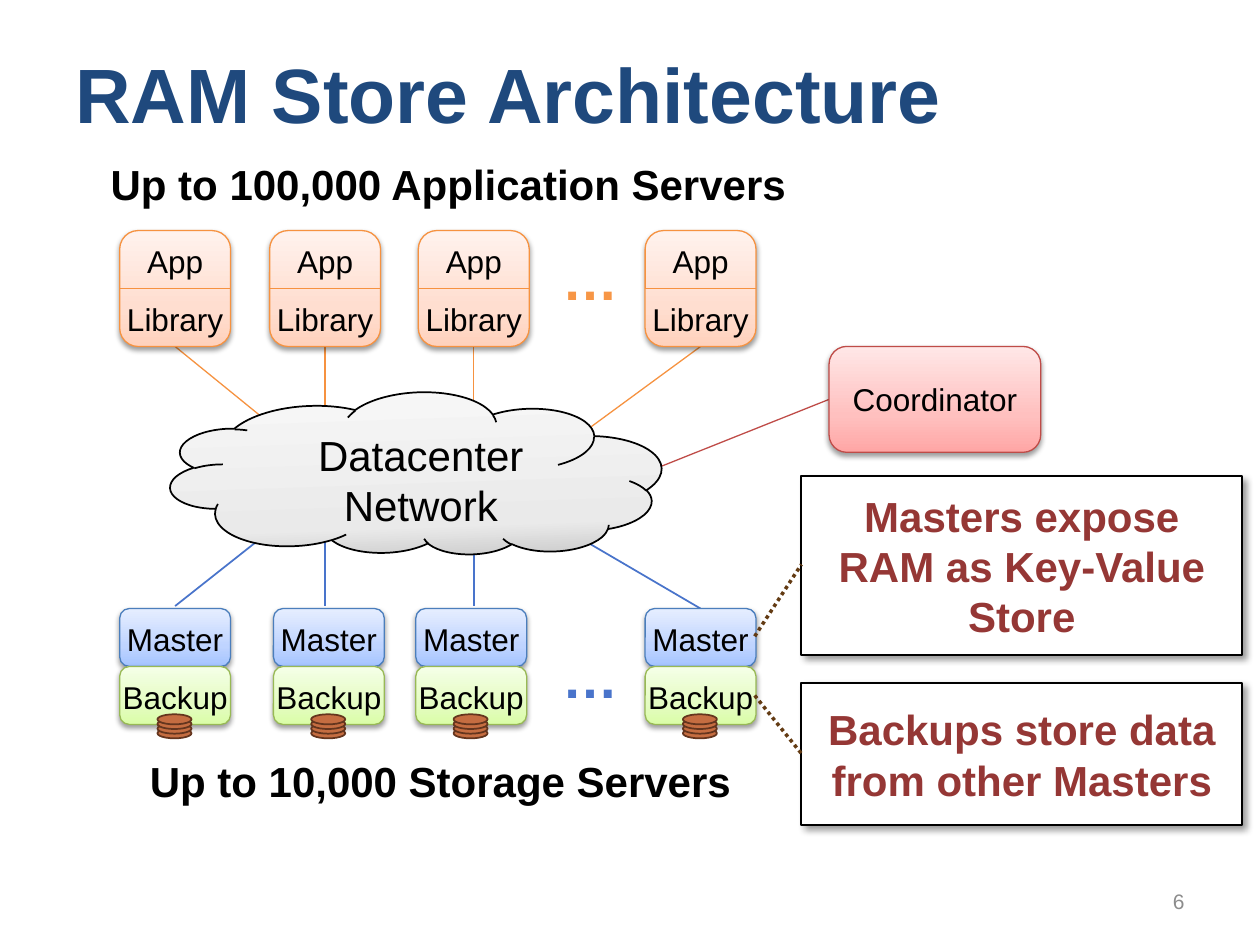
from copy import deepcopy

from pptx import Presentation
from pptx.dml.color import RGBColor
from pptx.enum.dml import MSO_LINE
from pptx.enum.shapes import MSO_CONNECTOR, MSO_SHAPE
from pptx.enum.text import MSO_ANCHOR, PP_ALIGN
from pptx.oxml import parse_xml
from pptx.oxml.ns import nsdecls, qn
from pptx.util import Inches, Pt

ROUNDED, RECTANGLE = MSO_SHAPE.ROUNDED_RECTANGLE, MSO_SHAPE.RECTANGLE
OVAL, CLOUD = MSO_SHAPE.OVAL, MSO_SHAPE.CLOUD
STRAIGHT, DOTTED = MSO_CONNECTOR.STRAIGHT, MSO_LINE.ROUND_DOT
LEFT, CENTER, RIGHT = PP_ALIGN.LEFT, PP_ALIGN.CENTER, PP_ALIGN.RIGHT
TOP, MIDDLE = MSO_ANCHOR.TOP, MSO_ANCHOR.MIDDLE

BLACK, WHITE = RGBColor(0, 0, 0), RGBColor(255, 255, 255)
NAVY = RGBColor(0x1F, 0x49, 0x7D)
GRAY = RGBColor(0x8C, 0x8C, 0x8C)
MAROON = RGBColor(0x95, 0x37, 0x35)
BROWN = RGBColor(0x63, 0x3B, 0x13)
DISK, DISK_EDGE = RGBColor(0xC5, 0x6D, 0x41), RGBColor(0x64, 0x35, 0x1E)
ORANGE, ORANGE_DOTS = RGBColor(0xF6, 0x92, 0x40), RGBColor(0xF7, 0x96, 0x46)
BLUE, BLUE_EDGE = RGBColor(0x49, 0x74, 0xCB), RGBColor(0x4B, 0x7E, 0xBC)
GREEN_EDGE = RGBColor(0x98, 0xB9, 0x55)
RED = RGBColor(0xBF, 0x4C, 0x48)

# Gradients as (position, colour), running upwards from the bottom edge
ORANGE_FADE = [(0, RGBColor(0xFF, 0xD2, 0xBD)), (0.35, RGBColor(0xFF, 0xDE, 0xD0)),
               (1, RGBColor(0xFF, 0xF2, 0xED))]
BLUE_FADE = [(0, RGBColor(0xA4, 0xC4, 0xFF)), (0.35, RGBColor(0xBF, 0xD4, 0xFF)),
             (1, RGBColor(0xE6, 0xEE, 0xFF))]
GREEN_FADE = [(0, RGBColor(0xDA, 0xFD, 0xA7)), (0.35, RGBColor(0xE4, 0xFC, 0xC2)),
              (1, RGBColor(0xF5, 0xFF, 0xE7))]
RED_FADE = [(0, RGBColor(0xFF, 0xA6, 0xA5)), (0.35, RGBColor(0xFF, 0xC0, 0xBF)),
            (1, RGBColor(0xFF, 0xE7, 0xE7))]
GRAY_FADE = [(0, RGBColor(0xF8, 0xF8, 0xF8)), (0.76, RGBColor(0xEA, 0xEA, 0xEA)),
             (1, RGBColor(0xC0, 0xC0, 0xC0))]

# Shadows as opacity %, blur pt, distance pt, angle
SOFT, DEEP = (38, 3.1, 1.6, 90), (40, 4, 3, 45)

deck = Presentation()
deck.slide_width, deck.slide_height = Inches(10), Inches(7.5)
page = deck.slides.add_slide(deck.slide_layouts[6])
COLUMN, ROW = deck.slide_width / 100, deck.slide_height / 75


def add_box(parent, kind, x, y, width, height, text="", fill=None, edge=None,
            weight=0.75, shadow=None, size=18, color=BLACK, bold=False,
            align=CENTER, anchor=TOP, margin=None, wrap=True):
    """Add a preset shape, or a text box if kind is None; lengths in grid cells."""
    area = (round(x * COLUMN), round(y * ROW), round(width * COLUMN), round(height * ROW))
    if kind is None:
        box = parent.add_textbox(*area)
    else:
        box = parent.add_shape(kind, *area)
        box.shadow.inherit = False
        box.line.color.rgb, box.line.width = edge, Pt(weight)
        if isinstance(fill, list):
            box.fill.gradient()
            box.fill.gradient_angle = 90
            stops = box._element.spPr.find(qn("a:gradFill")).find(qn("a:gsLst"))
            stops.append(deepcopy(stops[0]))
            for stop, (position, tint) in zip(box.fill.gradient_stops, fill):
                stop.position, stop.color.rgb = position, tint
        else:
            box.fill.solid()
            box.fill.fore_color.rgb = fill
    if shadow:
        add_shadow_to = box._element.spPr.find(qn("a:effectLst"))
        opacity, blur, distance, angle = shadow
        add_shadow_to.append(parse_xml(
            f'<a:outerShdw {nsdecls("a")} blurRad="{Pt(blur)}" dist="{Pt(distance)}" '
            f'dir="{angle * 60000}" rotWithShape="0"><a:srgbClr val="000000">'
            f'<a:alpha val="{opacity * 1000}"/></a:srgbClr></a:outerShdw>'))
    if text:
        frame = box.text_frame
        frame.word_wrap, frame.vertical_anchor = wrap, anchor
        if margin is not None:
            for side in ("left", "top", "right", "bottom"):
                setattr(frame, f"margin_{side}", margin)
        para = frame.paragraphs[0]
        para.text, para.alignment = text, align
        for span in para.runs:
            for name, value in {"name": "Arial", "size": Pt(size), "bold": bold}.items():
                setattr(span.font, name, value)
            span.font.color.rgb = color
    return box


def add_line(parent, x1, y1, x2, y2, color, weight=0.75, dash=None):
    """Add a straight line without a shadow; lengths in grid cells."""
    line = parent.add_connector(STRAIGHT, round(x1 * COLUMN), round(y1 * ROW),
                                round(x2 * COLUMN), round(y2 * ROW))
    line.line.color.rgb, line.line.width = color, Pt(weight)
    if dash:
        line.line.dash_style = dash
    line._element.spPr.append(parse_xml(f'<a:effectLst {nsdecls("a")}/>'))


shapes = page.shapes
SERVER_WIDTH, TIER = 8.8, 4.6
APP_TOP, STORAGE_TOP = 18.3, 48.3
APP_COLUMNS = [9.5, 21.4, 33.2, 51.2]
STORAGE_COLUMNS = [9.5, 21.7, 33, 51.2]

# Network links
add_line(shapes, 65.8, 31.7, 52.5, 37, RED)
for x1, y1, x2, y2 in [(25.8, 42.8, 25.8, 48.1), (37.6, 43.5, 37.6, 48.1),
                       (46.2, 42.8, 55.6, 48.3), (20.6, 42.8, 13.9, 48.1)]:
    add_line(shapes, x1, y1, x2, y2, BLUE, 1)
for x1, x2, y2 in [(13.9, 21.4, 33.6), (25.8, 25.8, 32.8),
                   (37.6, 37.6, 32.8), (55.6, 46.2, 34.4)]:
    add_line(shapes, x1, 27.5, x2, y2, ORANGE)

# Application servers
for x in APP_COLUMNS:
    server = shapes.add_group_shape().shapes
    add_box(server, ROUNDED, x, APP_TOP, SERVER_WIDTH, 2 * TIER,
            fill=ORANGE_FADE, edge=ORANGE, shadow=SOFT)
    for tier, label in enumerate(["App", "Library"]):
        add_box(server, None, x, APP_TOP + 0.9 + tier * TIER, SERVER_WIDTH, 2.8,
                label, margin=0)
    add_line(server, x, APP_TOP + TIER, x + SERVER_WIDTH, APP_TOP + TIER, ORANGE)

# Storage servers, each with a stack of disks
for x in STORAGE_COLUMNS:
    server = shapes.add_group_shape().shapes
    for tier, (label, fade, edge) in enumerate([("Master", BLUE_FADE, BLUE_EDGE),
                                                ("Backup", GREEN_FADE, GREEN_EDGE)]):
        y = STORAGE_TOP + tier * TIER
        add_box(server, ROUNDED, x, y, SERVER_WIDTH, TIER,
                fill=fade, edge=edge, shadow=SOFT)
        add_box(server, None, x, y + 0.9, SERVER_WIDTH, 2.8, label, margin=0)
    for disk in range(4):
        add_box(server, OVAL, x + 3, 57.8 - disk * 0.37, 2.7, 0.8,
                fill=DISK, edge=DISK_EDGE, weight=1)

# Ellipses between the servers
for y, color in [(18.9, ORANGE_DOTS), (50.5, BLUE)]:
    add_box(shapes, None, 43.7, y, 6, 5.9, "…", size=32, color=color, bold=True, wrap=False)

# Network cloud and coordinator
cloud = add_box(shapes, CLOUD, 13.5, 31.2, 39, 13, fill=GRAY_FADE, edge=BLACK, weight=1)
cloud.rotation = 358
cloud._element.spPr.xfrm.set("flipV", "1")
add_box(shapes, None, 23.1, 33.6, 20.6, 8.3, "Datacenter\vNetwork", size=24)
add_box(shapes, ROUNDED, 65.8, 27.5, 16.8, 8.4, "Coordinator",
        fill=RED_FADE, edge=RED, shadow=SOFT, anchor=MIDDLE)

# Title, headings and page number
add_box(shapes, None, 5, 3, 90, 8.7, "RAM Store Architecture", size=44, color=NAVY,
        bold=True, align=LEFT, anchor=MIDDLE)
add_box(shapes, None, 7.8, 12.1, 58.3, 5, "Up to 100,000 Application Servers",
        size=24, bold=True, align=LEFT)
add_box(shapes, None, 6.2, 59.5, 57.5, 5, "Up to 10,000 Storage Servers", size=24, bold=True)
add_box(shapes, None, 71.7, 69.5, 23.3, 4, "6", size=12, color=GRAY,
        align=RIGHT, anchor=MIDDLE)

# Callouts with their dotted leaders
for y, height, text, start, end in [
        (37.8, 14.2, "Masters expose RAM as Key-Value Store", 50.5, 44.8),
        (54.2, 11.3, "Backups store data from other Masters", 55.2, 59.8)]:
    add_box(shapes, RECTANGLE, 63.6, y, 35, height, text, fill=WHITE, edge=BLACK, weight=1,
            shadow=DEEP, size=24, color=MAROON, bold=True, anchor=MIDDLE)
    add_line(shapes, 59.9, start, 63.6, end, BROWN, 2, DOTTED)

deck.save("out.pptx")
